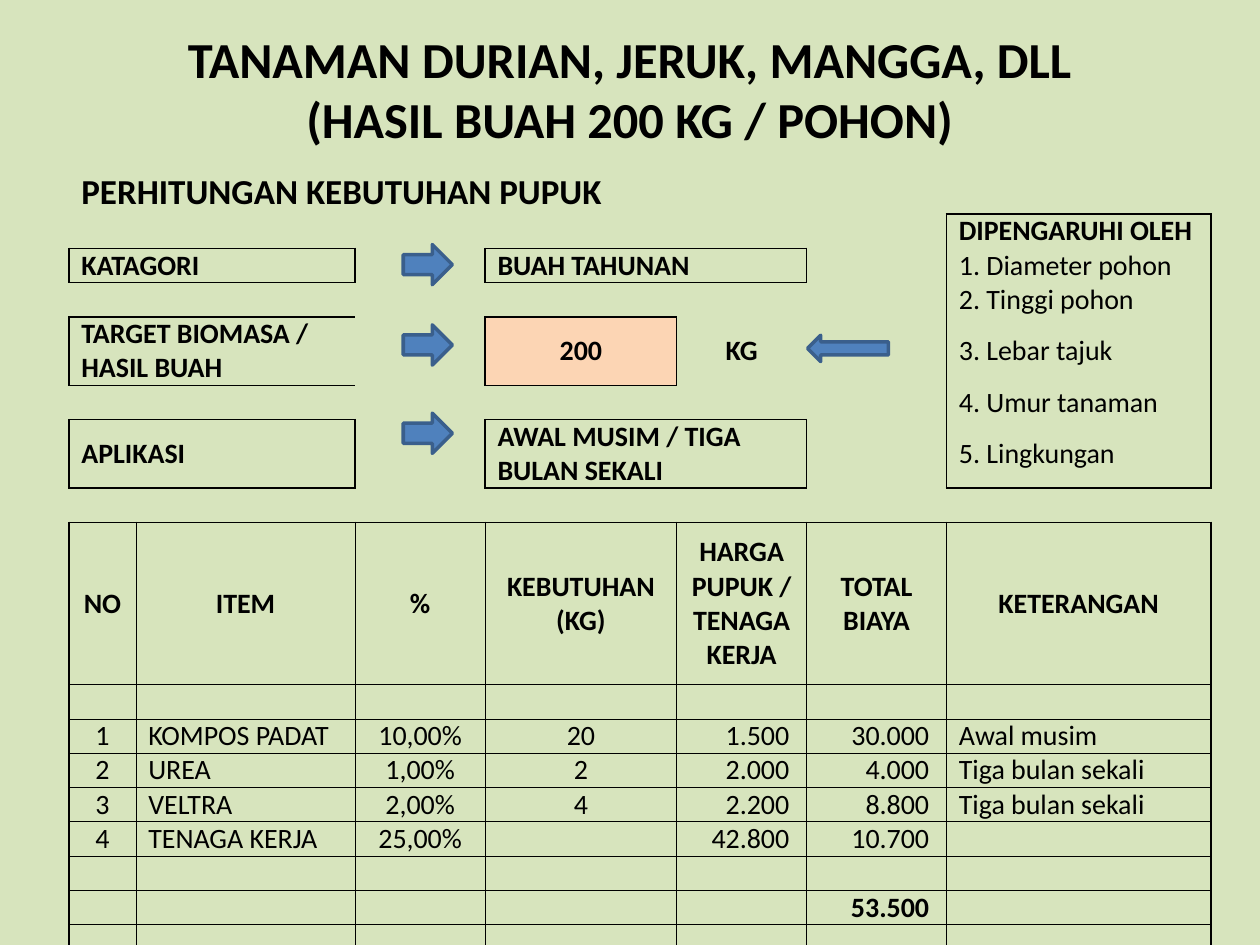
from lxml.etree import SubElement
from pptx import Presentation
from pptx.dml.color import RGBColor
from pptx.enum.shapes import MSO_SHAPE
from pptx.enum.text import MSO_ANCHOR, PP_ALIGN
from pptx.oxml.ns import qn
from pptx.util import Cm, Pt

COLOURS = {
    "page": "D7E4BD",
    "header": "D7E4BC",
    "target": "FCD5B4",
    "arrow": "4F81BD",
    "arrow_line": "3A5F8C",
    "ink": "000000",
}
FONT = "Calibri"
PLAIN_TABLE_STYLE = "{2D5ABB26-0587-4C30-8999-92F81FD0307C}"
LEFT, CENTRE, RIGHT = PP_ALIGN.LEFT, PP_ALIGN.CENTER, PP_ALIGN.RIGHT
PADDING = {LEFT: (0.25, 0), CENTRE: (0, 0), RIGHT: (0, 0.35)}

COLUMN_WIDTHS = [1.35, 4.42, 2.62, 3.86, 2.62, 2.82, 5.33]
ROW_COUNT, HEADER_ROW, TOTAL_ROW = 17, 8, 15
ROW_HEIGHT = 0.69
TALL_ROWS = {0: 0.86, 4: 1.38, 6: 1.38, HEADER_ROW: 3.27}
MERGES = [(0, 0, 0, 3), (2, 0, 2, 1), (2, 3, 2, 4), (3, 2, 5, 2),
          (4, 0, 4, 1), (6, 0, 6, 1), (6, 3, 6, 4)]
BOXES = [(2, 0, 2, 1, "LRTB"), (2, 3, 2, 4, "LRTB"), (4, 0, 4, 1, "LTB"),
         (4, 3, 4, 3, "LRTB"), (6, 0, 6, 1, "LRTB"), (6, 3, 6, 4, "LRTB"),
         (1, 6, 6, 6, "LRTB"), (HEADER_ROW, 0, ROW_COUNT - 1, 6, "LRTB")]

LABELS = {
    (0, 0): ("PERHITUNGAN KEBUTUHAN PUPUK", LEFT),
    (2, 0): ("KATAGORI", LEFT),
    (2, 3): ("BUAH TAHUNAN", LEFT),
    (4, 0): ("TARGET BIOMASA /\nHASIL BUAH", LEFT),
    (4, 3): ("200", CENTRE),
    (4, 4): ("KG", CENTRE),
    (6, 0): ("APLIKASI", LEFT),
    (6, 3): ("AWAL MUSIM / TIGA\nBULAN SEKALI", LEFT),
    (1, 6): ("DIPENGARUHI OLEH", LEFT),
    (TOTAL_ROW, 5): ("53.500", RIGHT),
}
FACTORS = ["1. Diameter pohon", "2. Tinggi pohon", "3. Lebar tajuk",
           "4. Umur tanaman", "5. Lingkungan"]
HEADERS = ["NO", "ITEM", "%", "KEBUTUHAN (KG)", "HARGA PUPUK / TENAGA KERJA",
           "TOTAL BIAYA", "KETERANGAN"]
ITEMS = [
    ["1", "KOMPOS PADAT", "10,00%", "20", "1.500", "30.000", "Awal musim"],
    ["2", "UREA", "1,00%", "2", "2.000", "4.000", "Tiga bulan sekali"],
    ["3", "VELTRA", "2,00%", "4", "2.200", "8.800", "Tiga bulan sekali"],
    ["4", "TENAGA KERJA", "25,00%", "", "42.800", "10.700", ""],
]
ITEM_ALIGNMENT = [CENTRE, LEFT, CENTRE, CENTRE, RIGHT, RIGHT, LEFT]
ARROWS = [
    (MSO_SHAPE.RIGHT_ARROW, 8.13, 4.93, 0.99, 0.81),
    (MSO_SHAPE.RIGHT_ARROW, 8.13, 6.55, 0.99, 0.81),
    (MSO_SHAPE.RIGHT_ARROW, 8.13, 8.33, 0.99, 0.81),
    (MSO_SHAPE.LEFT_ARROW, 16.28, 6.76, 1.63, 0.53),
]


def colour(name):
    return RGBColor.from_string(COLOURS[name])


def set_values(target, values):
    for name, value in values.items():
        setattr(target, name, value)


def write_text(frame, text, size, bold, alignment):
    frame.text = text
    for para in frame.paragraphs:
        para.alignment = alignment
        for span in para.runs:
            set_values(span.font, {"name": FONT, "size": Pt(size), "bold": bold})
            span.font.color.rgb = colour("ink")


def add_title(page, text):
    box = page.shapes.add_textbox(Cm(1.27), Cm(0.58), Cm(22.86), Cm(2.41))
    set_values(box.text_frame, {"word_wrap": True, "vertical_anchor": MSO_ANCHOR.MIDDLE})
    write_text(box.text_frame, text, 28.8, True, CENTRE)


def add_arrow(page, kind, *place):
    arrow = page.shapes.add_shape(kind, *map(Cm, place))
    arrow.shadow.inherit = False
    arrow.fill.solid()
    arrow.fill.fore_color.rgb = colour("arrow")
    arrow.line.color.rgb = colour("arrow_line")
    arrow.line.width = Pt(2)


def outline(edges, top, left, bottom, right, sides):
    for row in range(top, bottom + 1):
        for column in range(left, right + 1):
            borders = [("L", column == left, (row, column - 1, "R")),
                       ("R", column == right, (row, column + 1, "L")),
                       ("T", row == top, (row - 1, column, "B")),
                       ("B", row == bottom, (row + 1, column, "T"))]
            for side, on_edge, neighbour in borders:
                if on_edge and side in sides:
                    edges[row, column, side] = 1
                    edges[neighbour] = 1


def collect_edges():
    edges = {(row, column, side): 0.5 for row in range(HEADER_ROW, ROW_COUNT)
             for column in range(len(COLUMN_WIDTHS)) for side in "LRTB"}
    for box in BOXES:
        outline(edges, *box)
    return edges


def draw_border(cell, side, width):
    line = SubElement(cell._tc.get_or_add_tcPr(), qn(f"a:ln{side}"), w=str(Pt(width or 0)))
    if width:
        fill = SubElement(line, qn("a:solidFill"))
        SubElement(fill, qn("a:srgbClr"), val=COLOURS["ink"])
    else:
        SubElement(line, qn("a:noFill"))


def collect_contents():
    contents = {place: (text, True, alignment)
                for place, (text, alignment) in LABELS.items()}
    for row, text in enumerate(FACTORS, 2):
        contents[row, 6] = (text, False, LEFT)
    for column, text in enumerate(HEADERS):
        contents[HEADER_ROW, column] = (text, True, CENTRE)
    for row, values in enumerate(ITEMS, HEADER_ROW + 2):
        for column, text in enumerate(values):
            contents[row, column] = (text, False, ITEM_ALIGNMENT[column])
    return contents


def fill_cell(cell, content, size, shade):
    text, bold, alignment = content
    before, after = PADDING[alignment]
    set_values(cell, {"margin_left": Cm(before), "margin_right": Cm(after),
                      "margin_top": 0, "margin_bottom": 0,
                      "vertical_anchor": MSO_ANCHOR.MIDDLE})
    if text:
        write_text(cell.text_frame, text, size, bold, alignment)
    else:
        SubElement(cell.text_frame.paragraphs[0]._p, qn("a:endParaRPr"), sz=str(size * 100))
    if shade:
        cell.fill.solid()
        cell.fill.fore_color.rgb = colour(shade)
    else:
        cell.fill.background()


def add_fertiliser_table(page):
    heights = [TALL_ROWS.get(row, ROW_HEIGHT) for row in range(ROW_COUNT)]
    frame = page.shapes.add_table(ROW_COUNT, len(COLUMN_WIDTHS), Cm(1.39), Cm(3.45),
                                  Cm(sum(COLUMN_WIDTHS)), Cm(sum(heights)))
    table = frame.table
    set_values(table, {"first_row": False, "horz_banding": False})
    table._tbl.tblPr.find(qn("a:tableStyleId")).text = PLAIN_TABLE_STYLE
    for column, width in zip(table.columns, COLUMN_WIDTHS):
        column.width = Cm(width)
    for row, height in zip(table.rows, heights):
        row.height = Cm(height)
    for top, left, bottom, right in MERGES:
        table.cell(top, left).merge(table.cell(bottom, right))
    edges, contents = collect_edges(), collect_contents()
    for row in range(ROW_COUNT):
        for column in range(len(COLUMN_WIDTHS)):
            cell = table.cell(row, column)
            for side in "LRTB":
                draw_border(cell, side, edges.get((row, column, side)))
            shade = "header" if row == HEADER_ROW else None
            if (row, column) == (4, 3):
                shade = "target"
            content = contents.get((row, column), ("", False, LEFT))
            fill_cell(cell, content, 20 if row == 0 and content[0] else 16, shade)


def main():
    deck = Presentation()
    set_values(deck, {"slide_width": Cm(25.4), "slide_height": Cm(19.05)})
    page = deck.slides.add_slide(deck.slide_layouts[6])
    page.background.fill.solid()
    page.background.fill.fore_color.rgb = colour("page")
    add_fertiliser_table(page)
    add_title(page, "TANAMAN DURIAN, JERUK, MANGGA, DLL\n(HASIL BUAH 200 KG / POHON)")
    for arrow in ARROWS:
        add_arrow(page, *arrow)
    deck.save("out.pptx")


if __name__ == "__main__":
    main()
